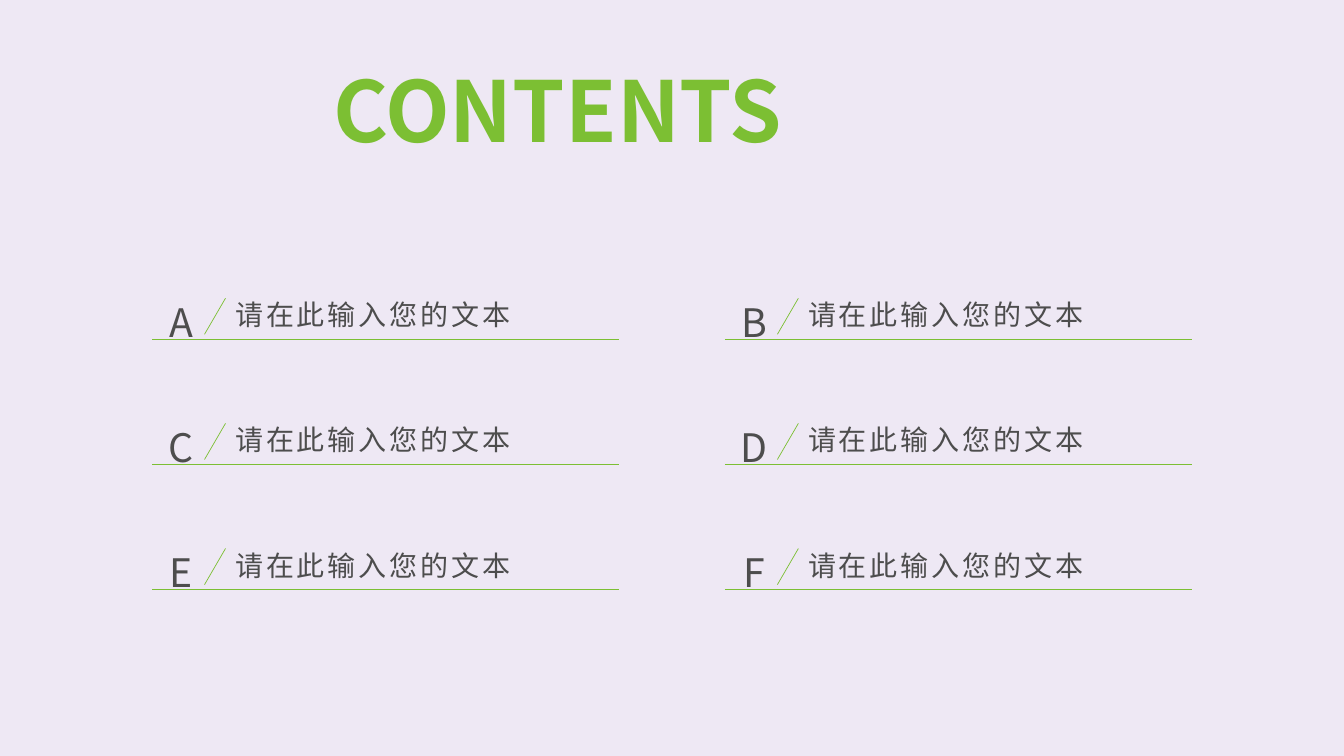
from dataclasses import dataclass

from lxml import etree
from pptx import Presentation
from pptx import util as u
from pptx.dml import color
from pptx.enum import shapes, text
from pptx.oxml import ns


@dataclass(frozen=True)
class Theme:
    font: str = "Noto Sans CJK SC"
    back: str = "EEE8F4"
    green: str = "7CBF33"
    ink: str = "4D4D4D"
    head: int = 60
    mark: int = 28
    body: int = 20
    rule: float = 0.5


def write(frame, words, size, ink, font, bold=False, align=None, lead=None, track=0):
    para = frame.paragraphs[0]
    para.alignment = align
    para.line_spacing = lead
    run = para.add_run()
    run.text = words
    run.font.size = u.Pt(size)
    run.font.bold = bold
    run.font.name = font
    run.font.color.rgb = color.RGBColor.from_string(ink)
    props = run.font._element
    etree.SubElement(props, ns.qn("a:ea"), typeface=font)
    if track:
        props.set("spc", str(track * 100))


class Board:
    """Draws styled elements on a slide grid of 160 columns by 90 rows."""

    def __init__(self, deck, theme):
        self.theme = theme
        self.col = deck.slide_width / 160
        self.row = deck.slide_height / 90
        self.slide = deck.slides.add_slide(deck.slide_layouts[6])
        fill = self.slide.background.fill
        fill.solid()
        fill.fore_color.rgb = color.RGBColor.from_string(theme.back)

    def place(self, x, y):
        return round(x * self.col), round(y * self.row)

    def label(self, words, x, y, w, h, anchor=None, inset=None, fit=None, **style):
        box = self.slide.shapes.add_textbox(*self.place(x, y), *self.place(w, h))
        frame = box.text_frame
        frame.word_wrap = True
        if fit:
            frame.auto_size = fit
        if anchor is not None:
            frame.vertical_anchor = anchor
        if inset is not None:
            frame.margin_left = round(inset * self.col)
            frame.margin_top = frame.margin_right = frame.margin_bottom = 0
        write(frame, words, font=self.theme.font, **style)

    def line(self, x1, y1, x2, y2):
        link = self.slide.shapes.add_connector(
            shapes.MSO_CONNECTOR.STRAIGHT, *self.place(x1, y1), *self.place(x2, y2))
        link.line.color.rgb = color.RGBColor.from_string(self.theme.green)
        link.line.width = u.Pt(self.theme.rule)
        etree.SubElement(link._element.spPr, ns.qn("a:effectLst"))

    def title(self, words):
        self.label(words, 38.5, 6.4, 82.9, 13.3,
                   fit=text.MSO_AUTO_SIZE.SHAPE_TO_FIT_TEXT,
                   size=self.theme.head, ink=self.theme.green, bold=True,
                   align=text.PP_ALIGN.JUSTIFY)

    def entry(self, mark, words, x, y):
        self.line(x, y, x + 55.6, y)
        self.label(words, x + 8.9, y - 5.9, 46.7, 5.9,
                   anchor=text.MSO_ANCHOR.MIDDLE, inset=1,
                   size=self.theme.body, ink=self.theme.ink, track=2)
        self.line(x + 8.75, y - 4.9, x + 6.25, y - 0.6)
        self.label(mark, x, y - 6.4, 7, 7.1,
                   anchor=text.MSO_ANCHOR.BOTTOM, inset=0,
                   size=self.theme.mark, ink=self.theme.ink,
                   align=text.PP_ALIGN.CENTER, lead=1.3)


def main():
    deck = Presentation()
    deck.slide_width, deck.slide_height = u.Inches(13.33), u.Inches(7.5)
    board = Board(deck, Theme())
    board.title("CONTENTS")
    for i, mark in enumerate("ABCDEF"):
        row, col = divmod(i, 2)
        board.entry(mark, "请在此输入您的文本", 18.1 + 68.2 * col, 40.4 + 14.9 * row)
    deck.save("out.pptx")


if __name__ == "__main__":
    main()
